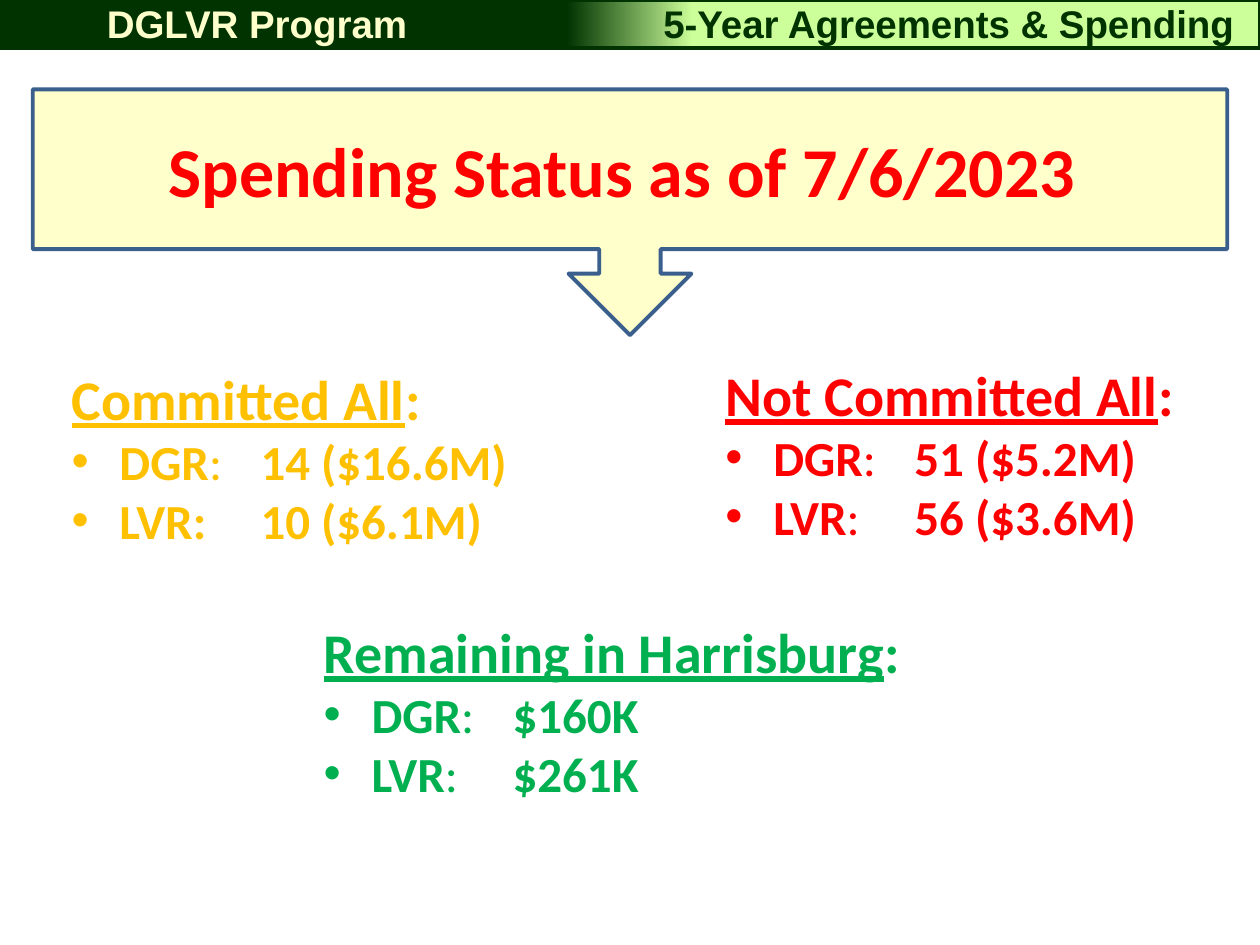
from pptx import Presentation
from pptx import util as u
from pptx.dml.color import RGBColor
from pptx.enum import shapes, text
from pptx.oxml.ns import qn
from lxml import etree

DARK_GREEN = RGBColor(0x00, 0x33, 0x00)
LIGHT_GREEN = RGBColor(0xCC, 0xFF, 0x99)
CREAM = RGBColor(0xFF, 0xFF, 0xCC)
BLUE = RGBColor(0x3A, 0x5F, 0x8C)
RED = RGBColor(0xFF, 0x00, 0x00)
GOLD = RGBColor(0xFF, 0xC0, 0x00)
GREEN = RGBColor(0x00, 0xB0, 0x50)


def set_font(font, name, size, color):
    font.name, font.size, font.bold = name, u.Pt(size), True
    font.color.rgb = color


def add_bullet(para):
    props = para._p.get_or_add_pPr()
    props.set("marL", str(u.Inches(0.38)))
    props.set("indent", str(u.Inches(-0.38)))
    font = etree.SubElement(props, qn("a:buFont"))
    font.set("typeface", "Arial")
    etree.SubElement(props, qn("a:buChar")).set("char", "•")


deck = Presentation()
deck.slide_width, deck.slide_height = u.Inches(10), u.Inches(7.5)
page = deck.slides.add_slide(deck.slide_layouts[6])

# Title callout
callout = page.shapes.add_shape(
    shapes.MSO_SHAPE.DOWN_ARROW_CALLOUT,
    u.Inches(0.26), u.Inches(0.71), u.Inches(9.48), u.Inches(1.95))
callout.shadow.inherit = False
callout.fill.solid()
callout.fill.fore_color.rgb = CREAM
callout.line.color.rgb = BLUE
callout.line.width = u.Pt(2.25)
callout.text_frame.vertical_anchor = text.MSO_ANCHOR.MIDDLE
para = callout.text_frame.paragraphs[0]
para.text = "Spending Status as of 7/6/2023 "
para.alignment = text.PP_ALIGN.CENTER
set_font(para.font, "Calibri", 40, RED)

# Header band
band = page.shapes.add_shape(
    shapes.MSO_SHAPE.RECTANGLE, 0, 0, u.Inches(10), u.Inches(0.38))
band.shadow.inherit = False
band.fill.gradient()
band.fill.gradient_angle = 0
stops = [(0.45, DARK_GREEN), (0.55, LIGHT_GREEN)]
for stop, (position, color) in zip(band.fill.gradient_stops, stops):
    stop.position = position
    stop.color.rgb = color
band.line.color.rgb = DARK_GREEN
band.line.width = u.Pt(2)

headers = [
    ("DGLVR Program", 0, 4.08, CREAM),
    ("5-Year Agreements & Spending", 5.02, 5.02, DARK_GREEN),
]
for label, left, width, color in headers:
    box = page.shapes.add_textbox(
        u.Inches(left), u.Inches(-0.05), u.Inches(width), u.Inches(0.47))
    box.text_frame.word_wrap = True
    box.text_frame.auto_size = text.MSO_AUTO_SIZE.SHAPE_TO_FIT_TEXT
    para = box.text_frame.paragraphs[0]
    para.text = label
    para.alignment = text.PP_ALIGN.CENTER
    set_font(para.font, "Arial", 22, color)

# Status lists: each row is label, separator, separator is bold, value
groups = [
    ("Committed All", GOLD, (0.47, 2.84, 4.44, 1.78),
     [("DGR", ": \t", False, "14 ($16.6M)"), ("LVR", ":\t", True, "10 ($6.1M)")]),
    ("Not Committed All", RED, (5.66, 2.81, 4.2, 1.81),
     [("DGR", ": \t", False, "51 ($5.2M)"), ("LVR", ": \t", False, "56 ($3.6M)")]),
    ("Remaining in Harrisburg", GREEN, (2.47, 4.85, 5.09, 1.81),
     [("DGR", ": \t", False, "$160K"), ("LVR", ": \t", False, "$261K")]),
]
for heading, color, place, rows in groups:
    box = page.shapes.add_textbox(*[u.Inches(length) for length in place])
    frame = box.text_frame
    frame.word_wrap = True
    para = frame.paragraphs[0]
    set_font(para.font, "Calibri", 32, color)
    span = para.add_run()
    span.text = heading
    span.font.underline = True
    para.add_run().text = ":"
    for label, separator, separator_bold, value in rows:
        para = frame.add_paragraph()
        add_bullet(para)
        set_font(para.font, "Calibri", 28, color)
        for words, bold in [(label, True), (separator, separator_bold), (value, True)]:
            span = para.add_run()
            span.text = words
            span.font.bold = bold

deck.save("out.pptx")
